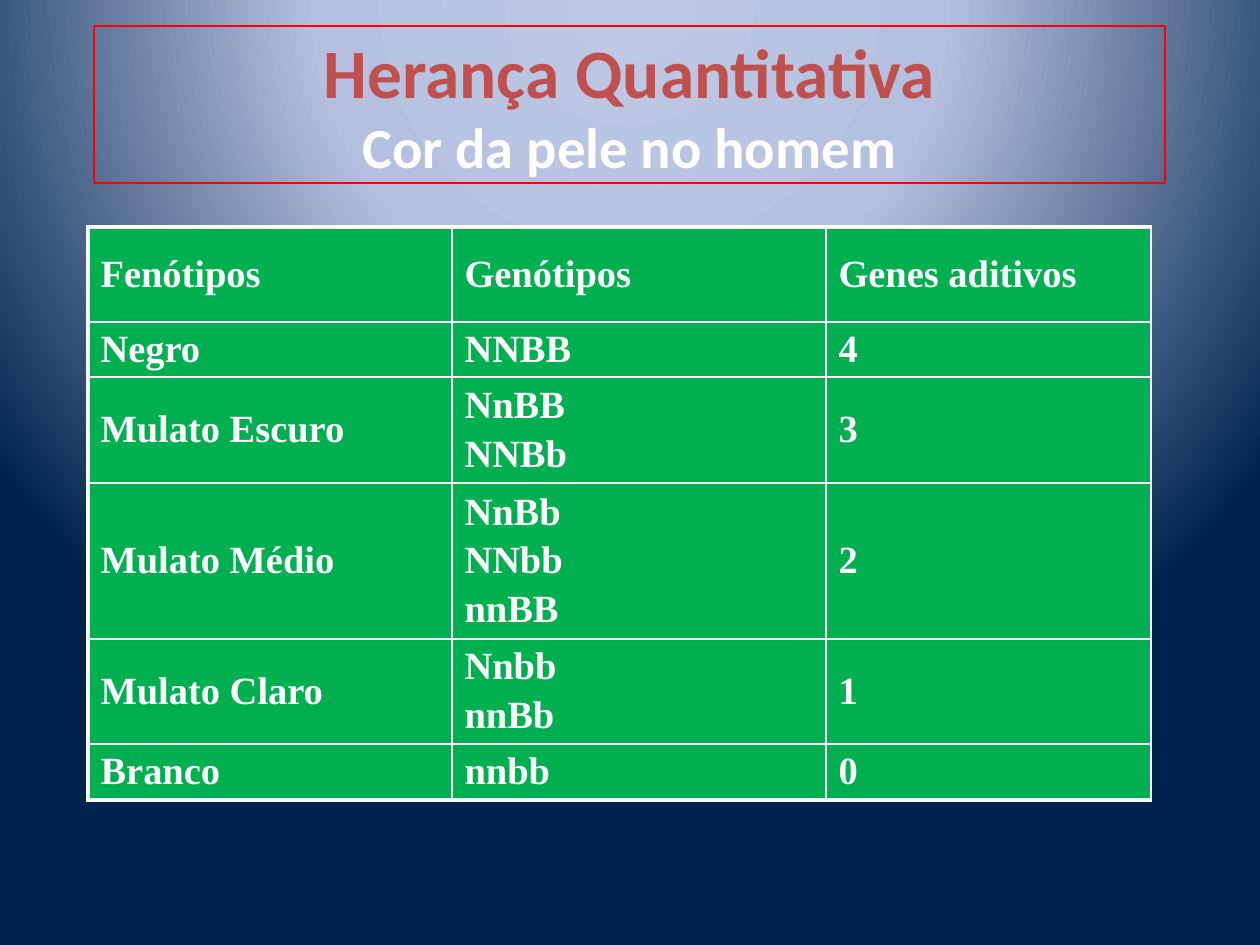
from lxml import etree
from pptx import Presentation
from pptx.dml.color import RGBColor
from pptx.enum.shapes import MSO_SHAPE
from pptx.enum.text import MSO_ANCHOR, PP_ALIGN
from pptx.oxml import parse_xml
from pptx.oxml.ns import qn
from pptx.util import Pt

PX = 914400 // 126
RECTANGLE = MSO_SHAPE.RECTANGLE
MIDDLE = MSO_ANCHOR.MIDDLE
LEFT, CENTER = PP_ALIGN.LEFT, PP_ALIGN.CENTER

WHITE = RGBColor(0xFF, 0xFF, 0xFF)
RED = RGBColor(0xFF, 0x00, 0x00)
BRICK = RGBColor(0xC0, 0x50, 0x4D)
GREEN = RGBColor(0x00, 0xB0, 0x50)
SKY = RGBColor(0xBF, 0xC9, 0xE5)
MIST = RGBColor(0xB5, 0xC0, 0xE0)
NAVY = RGBColor(0x00, 0x23, 0x4D)

GLOW = ((0, SKY), (40, MIST), (100, NAVY))
COLUMN_WIDTHS = (364, 374, 325)
ROW_HEIGHTS = (95, 55, 106, 156, 105, 56)
INHERITANCE = (
    ("Fenótipos", "Genótipos", "Genes aditivos"),
    ("Negro", "NNBB", "4"),
    ("Mulato Escuro", "NnBB\nNNBb", "3"),
    ("Mulato Médio", "NnBb\nNNbb\nnnBB", "2"),
    ("Mulato Claro", "Nnbb\nnnBb", "1"),
    ("Branco", "nnbb", "0"),
)
OUTER_WIDTH, INNER_WIDTH = 2.25, 1


def px(length):
    return length * PX


def write(paragraph, text, *, size, font, color=WHITE, align=LEFT):
    paragraph.alignment = align
    run = paragraph.add_run()
    run.text = text
    run.font.name = font
    run.font.size = Pt(size)
    run.font.bold = True
    run.font.color.rgb = color


def paint_background(slide):
    stops = "".join(
        f'<a:gs pos="{percent * 1000}"><a:srgbClr val="{color}"/></a:gs>'
        for percent, color in GLOW
    )
    background = parse_xml(
        '<p:bg xmlns:p="http://schemas.openxmlformats.org/presentationml/2006/main"'
        ' xmlns:a="http://schemas.openxmlformats.org/drawingml/2006/main">'
        f'<p:bgPr><a:gradFill rotWithShape="1"><a:gsLst>{stops}</a:gsLst>'
        '<a:path path="circle">'
        '<a:fillToRect l="50000" t="-80000" r="50000" b="180000"/></a:path>'
        "</a:gradFill><a:effectLst/></p:bgPr></p:bg>"
    )
    slide.element.cSld.insert(0, background)


def add_heading(slide, title, subtitle):
    heading = slide.shapes.add_shape(RECTANGLE, px(94), px(26), px(1071), px(157))
    heading.shadow.inherit = False
    heading.fill.background()
    heading.line.color.rgb = RED
    heading.line.width = Pt(0.75)
    frame = heading.text_frame
    frame.word_wrap = True
    frame.vertical_anchor = MIDDLE
    paragraph = frame.paragraphs[0]
    write(paragraph, title, size=39.6, font="Calibri", color=BRICK, align=CENTER)
    paragraph.add_line_break()
    write(paragraph, subtitle, size=32.4, font="Calibri", align=CENTER)


def add_border(cell, side, width):
    properties = cell._tc.get_or_add_tcPr()
    border = etree.SubElement(properties, qn(f"a:ln{side}"), w=str(Pt(width)))
    solid = etree.SubElement(border, qn("a:solidFill"))
    etree.SubElement(solid, qn("a:srgbClr"), val=str(WHITE))


def fill_cell(cell, text, outer_sides):
    for side in "LRTB":
        add_border(cell, side, OUTER_WIDTH if side in outer_sides else INNER_WIDTH)
    cell.fill.solid()
    cell.fill.fore_color.rgb = GREEN
    cell.vertical_anchor = MIDDLE
    cell.margin_top = cell.margin_bottom = px(5)
    for index, line in enumerate(text.split("\n")):
        if index:
            paragraph = cell.text_frame.add_paragraph()
            paragraph.space_before = Pt(3.5)
        else:
            paragraph = cell.text_frame.paragraphs[0]
        write(paragraph, line, size=22, font="Times New Roman")


def add_inheritance_table(slide):
    table = slide.shapes.add_table(
        len(ROW_HEIGHTS), len(COLUMN_WIDTHS), px(88), px(227),
        px(sum(COLUMN_WIDTHS)), px(sum(ROW_HEIGHTS)),
    ).table
    table.first_row = False
    table.horz_banding = False
    for column, width in zip(table.columns, COLUMN_WIDTHS):
        column.width = px(width)
    last = len(INHERITANCE) - 1
    for r, (height, values) in enumerate(zip(ROW_HEIGHTS, INHERITANCE)):
        table.rows[r].height = px(height)
        for c, value in enumerate(values):
            outer_sides = "L" * (c == 0) + "T" * (r == 0) + "B" * (r == last)
            fill_cell(table.cell(r, c), value, outer_sides)


def main():
    presentation = Presentation()
    presentation.slide_width = px(1260)
    presentation.slide_height = px(945)
    slide = presentation.slides.add_slide(presentation.slide_layouts[6])
    paint_background(slide)
    add_heading(slide, "Herança Quantitativa", "Cor da pele no homem")
    add_inheritance_table(slide)
    presentation.save("out.pptx")


if __name__ == "__main__":
    main()
